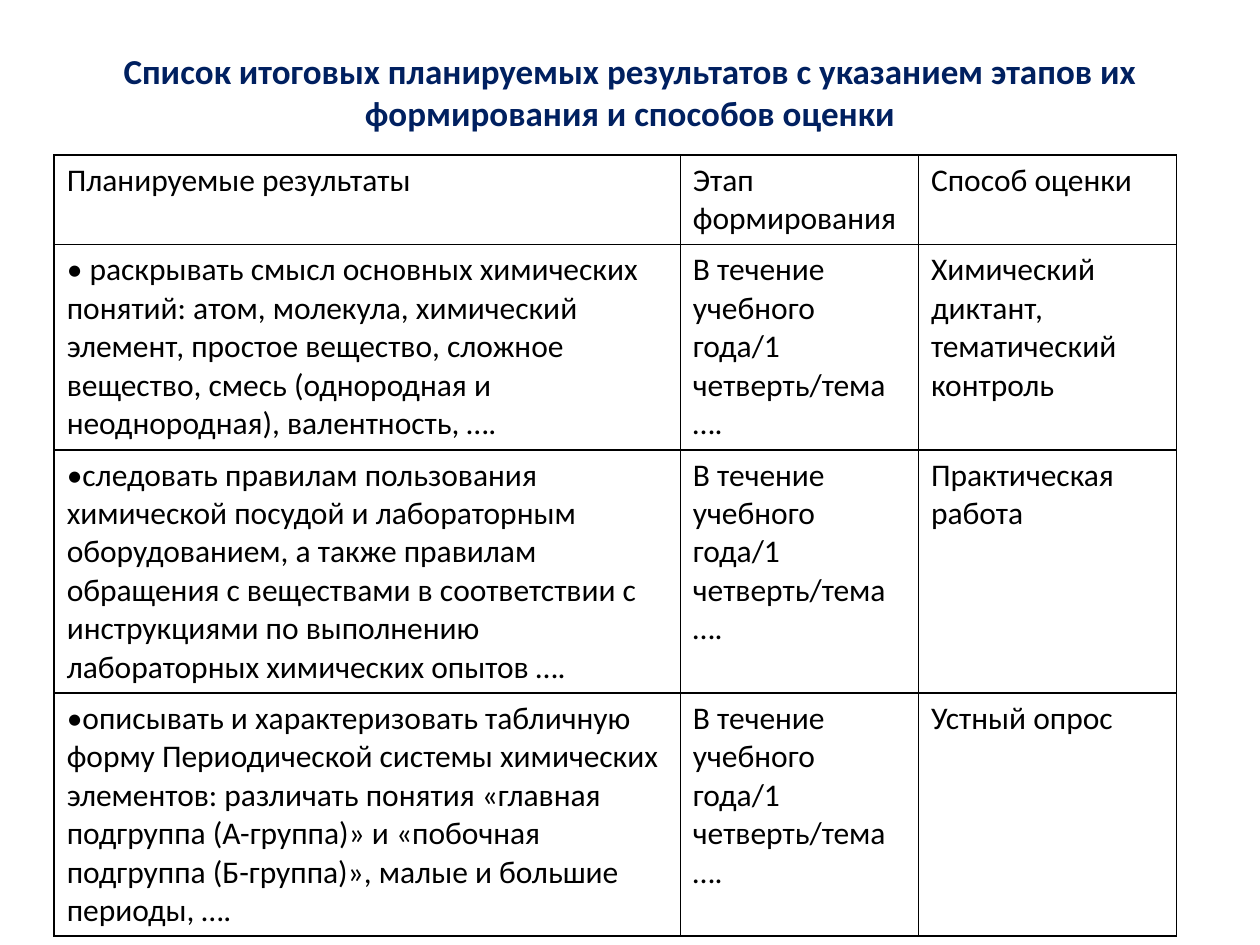
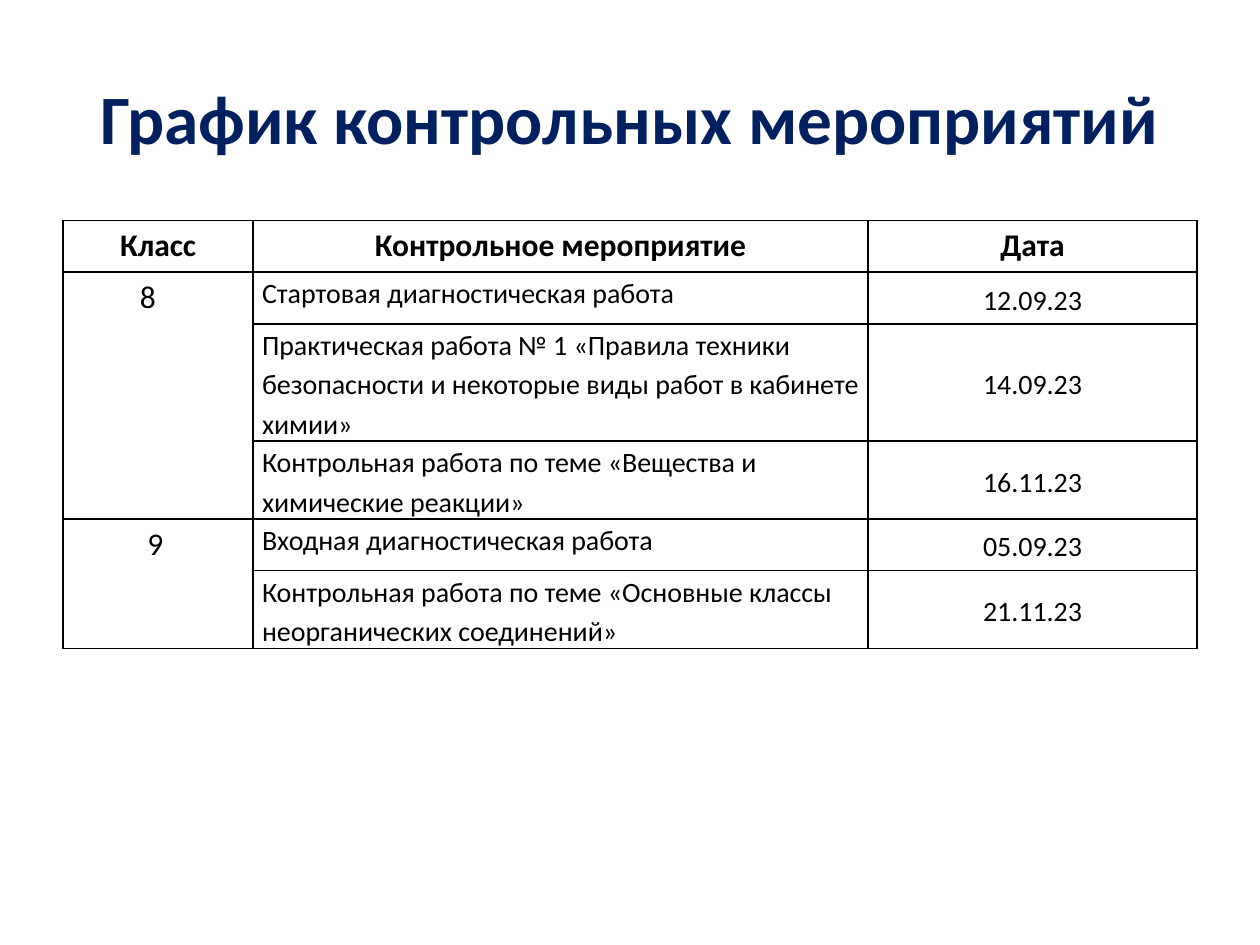
from lxml import etree
from pptx import Presentation
from pptx.dml.color import RGBColor
from pptx.enum.text import MSO_ANCHOR, PP_ALIGN
from pptx.oxml.ns import qn
from pptx.util import Inches, Pt

# Shared style
FONT = "Calibri"
NAVY, BLACK, WHITE = "002060", "000000", "FFFFFF"
LEFT, CENTER = PP_ALIGN.LEFT, PP_ALIGN.CENTER
TOP, MIDDLE = MSO_ANCHOR.TOP, MSO_ANCHOR.MIDDLE

# Slide 1 content
STAGE = "В течение учебного года/1 четверть/тема …."
RESULTS = [
    ["Планируемые результаты", "Этап формирования", "Способ оценки"],
    ["• раскрывать смысл основных химических понятий: атом, молекула, "
     "химический элемент, простое вещество, сложное вещество, смесь "
     "(однородная и неоднородная), валентность, ….",
     STAGE, "Химический диктант, тематический контроль"],
    ["•следовать правилам пользования химической посудой и лабораторным\n"
     "оборудованием, а также правилам обращения с веществами в соответствии "
     "с инструкциями по выполнению лабораторных химических опытов ….",
     STAGE, "Практическая работа"],
    ["•описывать и характеризовать табличную форму Периодической системы "
     "химических\n"
     "элементов: различать понятия «главная подгруппа (А-группа)» и "
     "«побочная подгруппа (Б-группа)», малые и большие периоды, ….",
     STAGE, "Устный опрос"],
]

# Slide 2 content
HEADS = ["Класс", "Контрольное мероприятие", "Дата"]
EVENTS = [
    ("Стартовая диагностическая работа", "12.09.23"),
    ("Практическая работа № 1 «Правила техники безопасности и некоторые "
     "виды работ в кабинете химии»", "14.09.23"),
    ("Контрольная работа по теме «Вещества и химические реакции»", "16.11.23"),
    ("Входная диагностическая работа", "05.09.23"),
    ("Контрольная работа по теме «Основные классы неорганических "
     "соединений»", "21.11.23"),
]
# Class, first row, last row, left margin
GRADES = [("8", 1, 3, 0.61), ("9", 4, 5, 0.67)]


def color(code):
    return RGBColor.from_string(code)


def write(frame, text, size, ink=BLACK, bold=False, align=LEFT, space=None):
    frame.word_wrap = True
    frame.text = text
    for para in frame.paragraphs:
        para.alignment = align
        if space:
            para.line_spacing = space
        font = para.font
        font.name, font.size, font.bold = FONT, Pt(size), bold
        font.color.rgb = color(ink)


def add_title(slide, text, size, height):
    box = slide.shapes.add_textbox(
        Inches(0.5), Inches(0.3), Inches(9), Inches(height))
    box.text_frame.vertical_anchor = MIDDLE
    write(box.text_frame, text, size, NAVY, True, CENTER)


def frame_cell(cell):
    """Draw thin black borders around a white cell."""
    props = cell._tc.get_or_add_tcPr()
    for side in ("a:lnL", "a:lnR", "a:lnT", "a:lnB"):
        line = etree.SubElement(props, qn(side), w=str(Pt(1)))
        fill = etree.SubElement(line, qn("a:solidFill"))
        etree.SubElement(fill, qn("a:srgbClr"), val=BLACK)
    cell.fill.solid()
    cell.fill.fore_color.rgb = color(WHITE)


def add_grid(slide, left, top, cols, rows):
    table = slide.shapes.add_table(
        len(rows), len(cols), Inches(left), Inches(top),
        Inches(sum(cols)), Inches(sum(rows))).table
    table.first_row = table.horz_banding = False
    for col, width in zip(table.columns, cols):
        col.width = Inches(width)
    for row, height in zip(table.rows, rows):
        row.height = Inches(height)
    for cell in table.iter_cells():
        frame_cell(cell)
    return table


def write_event(cell, text, align, anchor):
    cell.margin_left = cell.margin_right = Inches(0.07)
    cell.margin_top = cell.margin_bottom = 0
    cell.vertical_anchor = anchor
    write(cell.text_frame, text, 16, align=align, space=1.15)


def build_results(slide):
    add_title(slide, "Список итоговых планируемых результатов с указанием "
              "этапов их формирования и способов оценки", 20, 0.85)
    table = add_grid(slide, 0.43, 1.23, [4.97, 1.89, 2.05],
                     [0.71, 1.63, 1.93, 1.93])
    for r, row in enumerate(RESULTS):
        for c, text in enumerate(row):
            write(table.cell(r, c).text_frame, text, 18)


def build_dates(slide):
    add_title(slide, "График контрольных мероприятий", 39.6, 1.25)
    table = add_grid(slide, 0.5, 1.75, [1.51, 4.88, 2.61],
                     [0.41, 0.41, 0.93, 0.62, 0.41, 0.62])
    for c, text in enumerate(HEADS):
        write(table.cell(0, c).text_frame, text, 18, bold=True, align=CENTER)
    for r, (event, date) in enumerate(EVENTS, 1):
        write_event(table.cell(r, 1), event, LEFT, TOP)
        write_event(table.cell(r, 2), date, CENTER, MIDDLE)
    for grade, first, last, margin in GRADES:
        cell = table.cell(first, 0)
        cell.merge(table.cell(last, 0))
        cell.margin_left = Inches(margin)
        write(cell.text_frame, grade, 18)


def main():
    deck = Presentation()
    deck.slide_width, deck.slide_height = Inches(10), Inches(7.5)
    blank = deck.slide_layouts[6]
    for build in (build_results, build_dates):
        build(deck.slides.add_slide(blank))
    deck.save("out.pptx")


if __name__ == "__main__":
    main()
